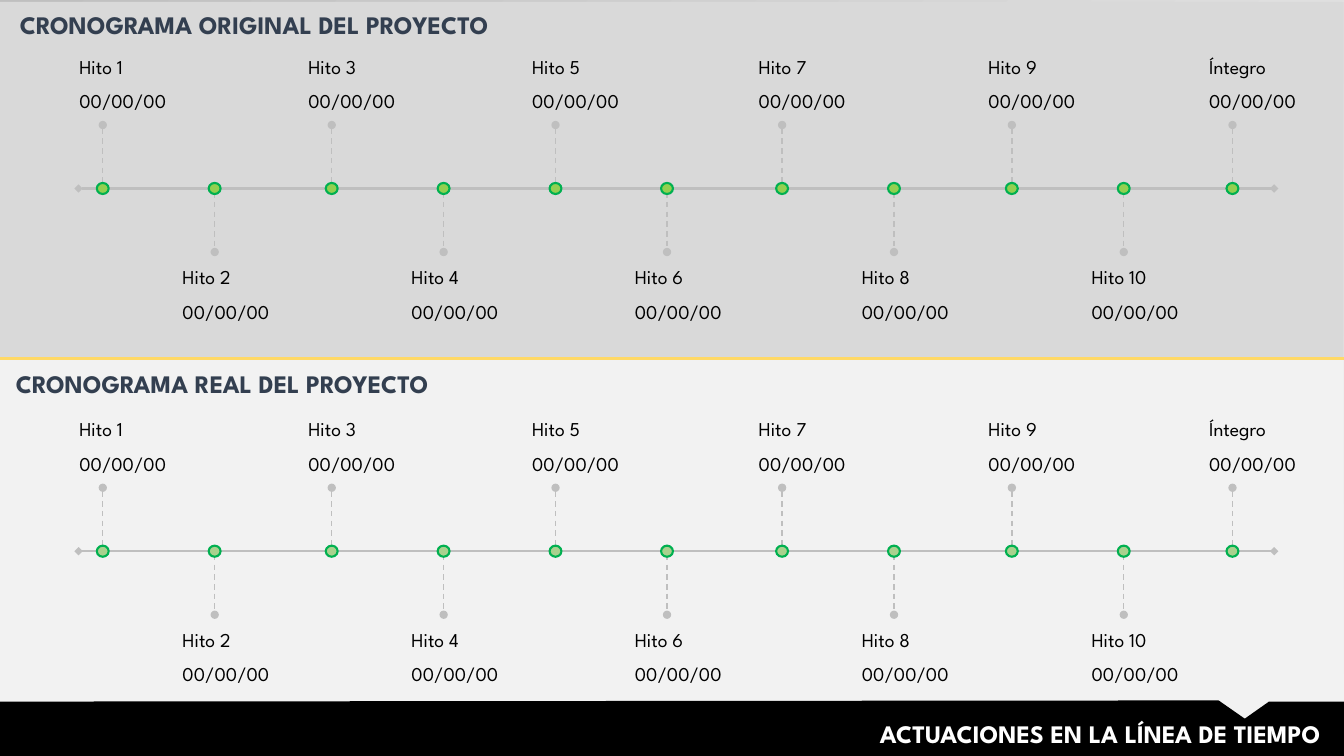
"""Build a slide comparing the planned and the actual project timeline."""
from dataclasses import dataclass
from typing import Any, Optional

from lxml import etree
from pptx import Presentation
from pptx import util as u
from pptx.dml import color
from pptx.enum import dml, shapes, text
from pptx.oxml import ns


@dataclass(frozen=True)
class Theme:
    """Colours and type sizes of the slide."""
    font: str = "League Spartan"
    heading_size: float = 18
    label_size: float = 14
    heading: str = "333F50"
    ink: str = "000000"
    paper: str = "FFFFFF"
    grey: str = "BFBFBF"
    upper_band: str = "D9D9D9"
    lower_band: str = "F2F2F2"
    divider: str = "FFD966"
    ring: str = "00B050"
    planned: str = "92D050"
    actual: str = "A9D18E"


@dataclass(frozen=True)
class Box:
    """A rectangle in centimetres."""
    left: float
    top: float
    width: float
    height: float

    def emu(self) -> list[int]:
        """Return the four lengths for python-pptx."""
        return [u.Cm(v) for v in (self.left, self.top, self.width, self.height)]


@dataclass(frozen=True)
class Milestone:
    """A named point on the time axis."""
    name: str
    x: float


@dataclass(frozen=True)
class Timeline:
    """One half of the slide."""
    title: str
    title_box: Box
    axis_y: float
    dot: str


@dataclass(frozen=True)
class Stroke:
    """The look of a straight line."""
    colour: str
    width: float
    end: Optional[str] = None
    dash: Any = None


THEME = Theme()
WIDTH, HEIGHT = 33.87, 19.05
STEM = 1.6
DATE = "00/00/00"
AXIS = Stroke(THEME.grey, 1.5, "diamond")
STEM_STROKE = Stroke(THEME.grey, 1, "oval", dml.MSO_LINE.DASH)
STOPS = (2.59, 5.41, 8.36, 11.18, 14.0, 16.81, 19.71, 22.53, 25.5, 28.32, 31.06)
NAMES = [f"Hito {n}" for n in range(1, len(STOPS))] + ["Íntegro"]
MILESTONES = [Milestone(name, x) for name, x in zip(NAMES, STOPS)]
BANDS = (
    (Box(-0.05, 0.05, 33.91, 8.99), THEME.upper_band),
    (Box(-0.05, 9.04, 33.91, 10.06), THEME.lower_band),
)
FOOTER = ((0, 17.68), (30.71, 17.65), (31.37, 18.11), (31.98, 17.68),
          (WIDTH, 17.68), (WIDTH, 19.1), (0, 19.1))
TIMELINES = (
    Timeline("CRONOGRAMA ORIGINAL DEL PROYECTO", Box(0.2, 0.08, 13.41, 1.04),
             4.75, THEME.planned),
    Timeline("CRONOGRAMA REAL DEL PROYECTO", Box(0.1, 9.14, 13.41, 1.04),
             13.89, THEME.actual),
)


def rgb(code: str) -> color.RGBColor:
    """Turn a hex code into a colour."""
    return color.RGBColor.from_string(code)


def apply(target: Any, formats: dict[str, Any]) -> None:
    """Set each format value on the target."""
    for key, value in formats.items():
        setattr(target, key, value)


def paint(shape: Any, fill: str, ring: Optional[str] = None) -> None:
    """Give a shape a flat fill and an optional outline."""
    shape.shadow.inherit = False
    shape.fill.solid()
    shape.fill.fore_color.rgb = rgb(fill)
    if ring:
        shape.line.color.rgb = rgb(ring)
        shape.line.width = u.Pt(1.5)
    else:
        shape.line.fill.background()


def draw_line(parent: Any, start: tuple[float, float], finish: tuple[float, float],
              stroke: Stroke) -> None:
    """Draw a straight line with equal end marks."""
    line = parent.add_connector(shapes.MSO_CONNECTOR.STRAIGHT,
                                *(u.Cm(v) for v in start + finish))
    line.line.color.rgb = rgb(stroke.colour)
    line.line.width = u.Pt(stroke.width)
    if stroke.dash:
        line.line.dash_style = stroke.dash
    properties = line._element.spPr
    if stroke.end:
        outline = properties.find(ns.qn("a:ln"))
        for tag in ("a:headEnd", "a:tailEnd"):
            etree.SubElement(outline, ns.qn(tag), type=stroke.end)
    etree.SubElement(properties, ns.qn("a:effectLst"))


def write(parent: Any, box: Box, lines: list[str], font: dict[str, Any], ink: str,
          paragraph: dict[str, Any], frame: dict[str, Any]) -> None:
    """Write one paragraph per line into a text box."""
    body = parent.add_textbox(*box.emu()).text_frame
    apply(body, {"word_wrap": True, **frame})
    for index, words in enumerate(lines):
        entry = body.add_paragraph() if index else body.paragraphs[0]
        apply(entry, paragraph)
        run = entry.add_run()
        run.text = words
        apply(run.font, {"name": THEME.font, **font})
        run.font.color.rgb = rgb(ink)


def draw_milestone(parent: Any, stop: Milestone, above: bool, timeline: Timeline) -> None:
    """Draw the stem, dot and label of a milestone."""
    axis = timeline.axis_y
    top = axis - STEM if above else axis
    draw_line(parent, (stop.x, top), (stop.x, top + STEM), STEM_STROKE)
    dot = parent.add_shape(shapes.MSO_SHAPE.OVAL,
                           *Box(stop.x - 0.15, axis - 0.14, 0.3, 0.28).emu())
    paint(dot, timeline.dot, THEME.ring)
    if above:
        label = Box(stop.x - 0.84, axis - 3.5, 4.83, 1.63)
    else:
        label = Box(stop.x - 1.06, axis + 1.8, 4.83, 1.63)
    write(parent, label, [stop.name, DATE], {"size": u.Pt(THEME.label_size)},
          THEME.ink, {"space_after": u.Pt(8)}, {})


def draw_timeline(slide: Any, timeline: Timeline) -> None:
    """Draw the axis with its milestones and the title."""
    group = slide.shapes.add_group_shape().shapes
    draw_line(group, (1.98, timeline.axis_y), (32.11, timeline.axis_y), AXIS)
    for index, stop in enumerate(MILESTONES):
        draw_milestone(group, stop, index % 2 == 0, timeline)
    inset = {"margin_left": u.Cm(0.3), "margin_right": u.Cm(0.3),
             "margin_top": u.Cm(0.15), "margin_bottom": u.Cm(0.15)}
    write(slide.shapes, timeline.title_box, [timeline.title],
          {"size": u.Pt(THEME.heading_size), "bold": True}, THEME.heading,
          {"line_spacing": u.Pt(21.5), "space_before": u.Pt(3.6)},
          {"auto_size": text.MSO_AUTO_SIZE.SHAPE_TO_FIT_TEXT, **inset})


def draw_backdrop(slide: Any) -> None:
    """Draw the background, both bands and the footer."""
    fill = slide.background.fill
    fill.gradient()
    fill.gradient_angle = 135
    for stop, code in zip(fill.gradient_stops, (THEME.lower_band, THEME.grey)):
        stop.color.rgb = rgb(code)
    for box, code in BANDS:
        paint(slide.shapes.add_shape(shapes.MSO_SHAPE.RECTANGLE, *box.emu()), code)
    corners = [(u.Cm(x), u.Cm(y)) for x, y in FOOTER]
    outline = slide.shapes.build_freeform(*corners[0])
    outline.add_line_segments(corners[1:], close=True)
    paint(outline.convert_to_shape(), THEME.ink)
    write(slide.shapes, Box(10.52, 17.98, 23.01, 1.02),
          ["ACTUACIONES EN LA LÍNEA DE TIEMPO"],
          {"size": u.Pt(THEME.heading_size), "bold": True}, THEME.paper,
          {"alignment": text.PP_ALIGN.RIGHT},
          {"auto_size": text.MSO_AUTO_SIZE.SHAPE_TO_FIT_TEXT})


def main() -> None:
    """Build and save the slide."""
    deck = Presentation()
    apply(deck, {"slide_width": u.Cm(WIDTH), "slide_height": u.Cm(HEIGHT)})
    slide = deck.slides.add_slide(deck.slide_layouts[6])
    draw_backdrop(slide)
    for timeline in TIMELINES:
        draw_timeline(slide, timeline)
    draw_line(slide.shapes, (0, 9.04), (WIDTH, 9.04), Stroke(THEME.divider, 2.25))
    deck.save("out.pptx")


if __name__ == "__main__":
    main()
